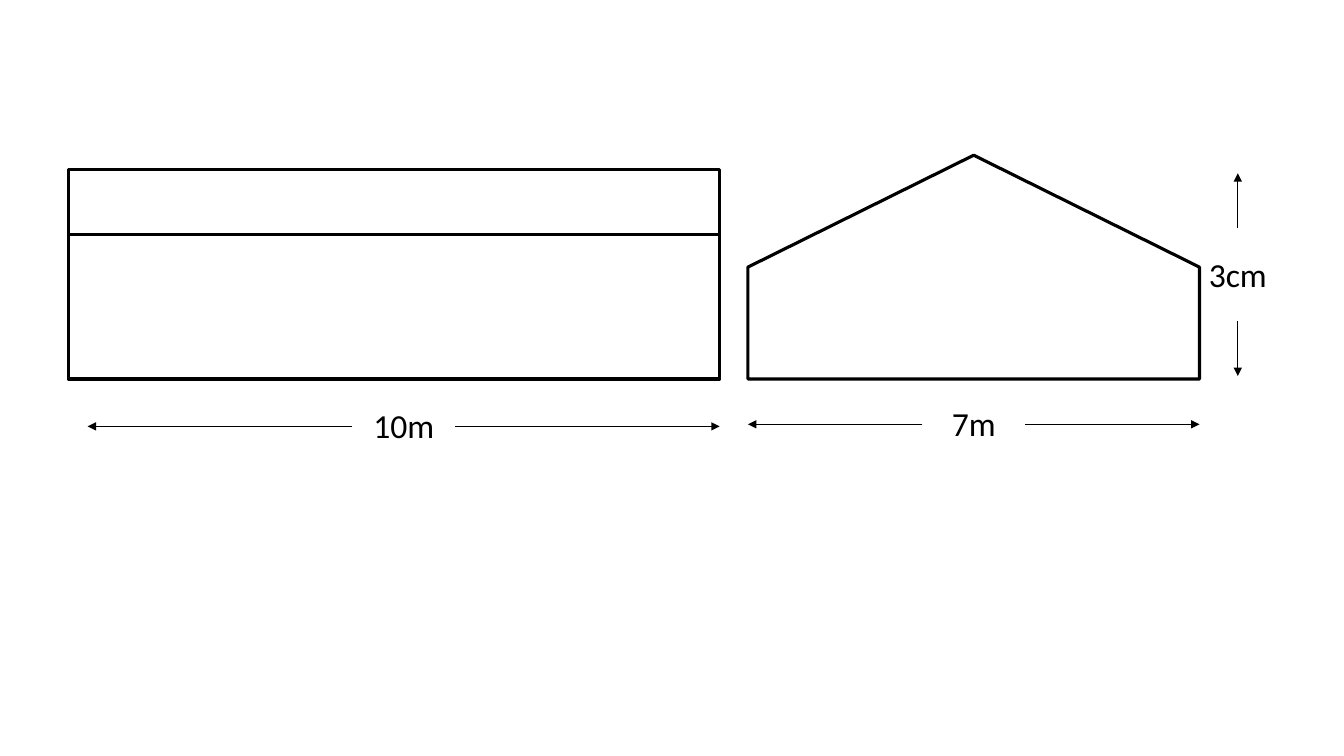
from lxml import etree
from pptx import Presentation
from pptx.dml.color import RGBColor
from pptx.enum.shapes import MSO_CONNECTOR, MSO_SHAPE
from pptx.enum.text import MSO_ANCHOR, PP_ALIGN
from pptx.oxml.ns import qn
from pptx.util import Inches, Pt

RECT, PENT = MSO_SHAPE.RECTANGLE, MSO_SHAPE.PENTAGON
LINE = MSO_CONNECTOR.STRAIGHT
TOP, MID = MSO_ANCHOR.TOP, PP_ALIGN.CENTER
WIDE, HIGH = Inches(13.33), Inches(7.5)
COL, ROW = WIDE / 100, HIGH / 100
BLACK, WHITE = "000000", "FFFFFF"
THICK, THIN = 2.25, 0.5
LABEL_W, LABEL_H, LABEL_UP = 10.35, 6.67, 3.47
FRAME = {"word_wrap": True, "vertical_anchor": TOP}
FONT = {"name": "Calibri", "size": Pt(24)}


def color(text):
    return RGBColor.from_string(text)


def spot(x, y):
    return round(x * COL), round(y * ROW)


def apply(item, style):
    for key, value in style.items():
        setattr(item, key, value)


def ink(item, width):
    item.line.color.rgb = color(BLACK)
    item.line.width = Pt(width)


def wall(slide, kind, left, top, wide, high):
    shape = slide.shapes.add_shape(kind, left, top, wide, high)
    shape.shadow.inherit = False
    shape.fill.solid()
    shape.fill.fore_color.rgb = color(WHITE)
    ink(shape, THICK)
    return shape


def rule(slide, start, end, width, arrow=False):
    line = slide.shapes.add_connector(LINE, *start, *end)
    ink(line, width)
    if arrow:
        etree.SubElement(line.line._get_or_add_ln(), qn("a:tailEnd"), type="triangle")
    etree.SubElement(line._element.spPr, qn("a:effectLst"))


def label(slide, text, x, y):
    box = slide.shapes.add_textbox(
        *spot(x - LABEL_W / 2, y - LABEL_UP), *spot(LABEL_W, LABEL_H))
    apply(box.text_frame, FRAME)
    para = box.text_frame.paragraphs[0]
    para.alignment = MID
    run = para.add_run()
    run.text = text
    apply(run.font, FONT)
    run.font.color.rgb = color(BLACK)


def measure(slide, text, start, end, gap):
    x, y = ((a + b) / 2 for a, b in zip(start, end))
    dx, dy = gap[0] / 2, gap[1] / 2
    label(slide, text, x, y)
    rule(slide, spot(x - dx, y - dy), spot(*start), THIN, True)
    rule(slide, spot(x + dx, y + dy), spot(*end), THIN, True)


def side(slide, x, y, wide, high):
    wall(slide, RECT, *spot(x, y), *spot(wide, high))
    eave = y + high * 0.31
    rule(slide, spot(x, eave), spot(x + wide, eave), THICK)
    below = y + high + 6.27
    measure(slide, "10m", (x + 1.43, below), (x + wide, below), (7.65, 0))


def gable(slide, x, y, wide, high):
    left, top = spot(x, y)
    span, rise = spot(wide, high)
    shift = (span - rise) // 2
    shape = wall(slide, PENT, left + shift, top - shift, rise, span)
    shape.rotation = 270
    below = y + high + 6
    measure(slide, "7m", (x, below), (x + wide, below), (7.65, 0))
    right = x + wide + 2.85
    measure(slide, "3cm", (right, y + 2.4), (right, y + high - 0.4), (0, 12.27))


def main():
    deck = Presentation()
    apply(deck, {"slide_width": WIDE, "slide_height": HIGH})
    slide = deck.slides.add_slide(deck.slide_layouts[6])
    side(slide, 5.1, 22.4, 48.45, 27.73)
    gable(slide, 55.65, 20.53, 33.6, 29.6)
    deck.save("out.pptx")


if __name__ == "__main__":
    main()
